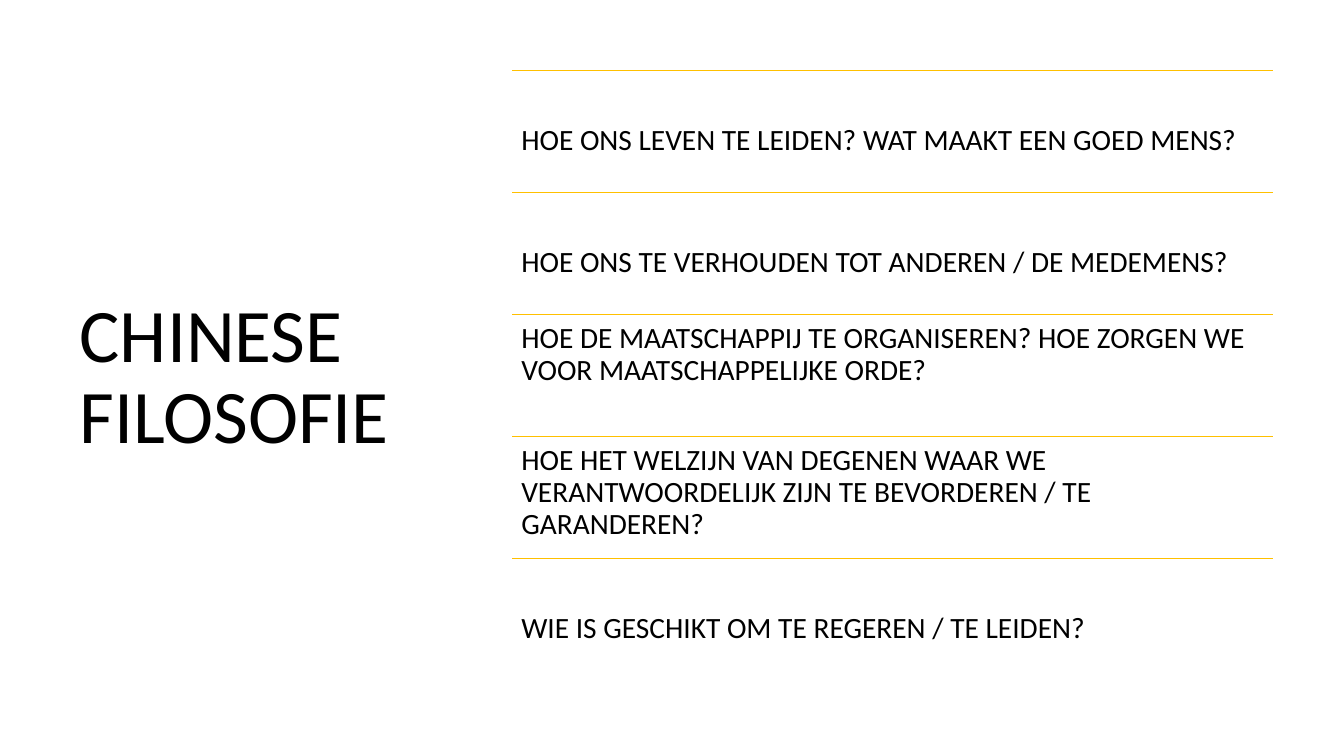
from dataclasses import dataclass

from lxml import etree
from pptx import Presentation
from pptx import util as u
from pptx.dml.color import RGBColor
from pptx.enum import shapes, text
from pptx.oxml import ns

HUES = {"ink": "000000", "rule": "FFC000", "page": "FFFFFF"}
FONT = "Calibri"
LEFT, TOP, WIDTH, PITCH = 5.08, 0.7, 7.55, 1.21
INSET, DROP = 0.09, 0.45


@dataclass
class Row:
    """A question and whether it sits one line lower in its band."""
    words: str
    low: bool = False


ROWS = [
    Row("HOE ONS LEVEN TE LEIDEN? WAT MAAKT EEN GOED MENS?", True),
    Row("HOE ONS TE VERHOUDEN TOT ANDEREN / DE MEDEMENS?", True),
    Row("HOE DE MAATSCHAPPIJ TE ORGANISEREN? HOE ZORGEN WE VOOR MAATSCHAPPELIJKE ORDE?"),
    Row("HOE HET WELZIJN VAN DEGENEN WAAR WE VERANTWOORDELIJK ZIJN TE BEVORDEREN / TE GARANDEREN?"),
    Row("WIE IS GESCHIKT OM TE REGEREN / TE LEIDEN?", True),
]


def hue(name: str) -> RGBColor:
    """Return a named colour."""
    return RGBColor.from_string(HUES[name])


def write(shape, words: str, size: float) -> None:
    """Set and format the text of a shape."""
    frame = shape.text_frame
    frame.text = words
    frame.word_wrap = True
    frame.auto_size = text.MSO_AUTO_SIZE.NONE
    para = frame.paragraphs[0]
    para.alignment = text.PP_ALIGN.LEFT
    para.line_spacing = 0.9
    font = para.runs[0].font
    font.name, font.size = FONT, u.Pt(size)
    font.color.rgb = hue("ink")


def rule(slide, top: float) -> None:
    """Draw a line above a question."""
    y = u.Inches(top)
    line = slide.shapes.add_connector(
        shapes.MSO_CONNECTOR.STRAIGHT, u.Inches(LEFT), y, u.Inches(LEFT + WIDTH), y)
    line.line.color.rgb = hue("rule")
    line.line.width = u.Pt(1)
    etree.SubElement(line._element.spPr, ns.qn("a:effectLst"))


def band(slide, row: Row, top: float) -> None:
    """Draw a question under its line."""
    rule(slide, top)
    box = slide.shapes.add_textbox(
        u.Inches(LEFT), u.Inches(top), u.Inches(WIDTH), u.Inches(PITCH))
    frame = box.text_frame
    frame.margin_left = frame.margin_right = frame.margin_bottom = u.Inches(INSET)
    frame.margin_top = u.Inches(INSET + DROP * row.low)
    frame.vertical_anchor = text.MSO_ANCHOR.TOP
    write(box, row.words, 21)


def main() -> None:
    """Build the slide and save it."""
    deck = Presentation()
    deck.slide_width, deck.slide_height = u.Inches(13.33), u.Inches(7.5)
    slide = deck.slides.add_slide(deck.slide_layouts[5])
    slide.background.fill.solid()
    slide.background.fill.fore_color.rgb = hue("page")
    title = slide.shapes.title
    title.left, title.top = u.Inches(0.69), u.Inches(TOP)
    title.width, title.height = u.Inches(3.74), u.Inches(6.11)
    title.text_frame.vertical_anchor = text.MSO_ANCHOR.MIDDLE
    write(title, "CHINESE FILOSOFIE", 54)
    for i, row in enumerate(ROWS):
        band(slide, row, TOP + i * PITCH)
    deck.save("out.pptx")


if __name__ == "__main__":
    main()
